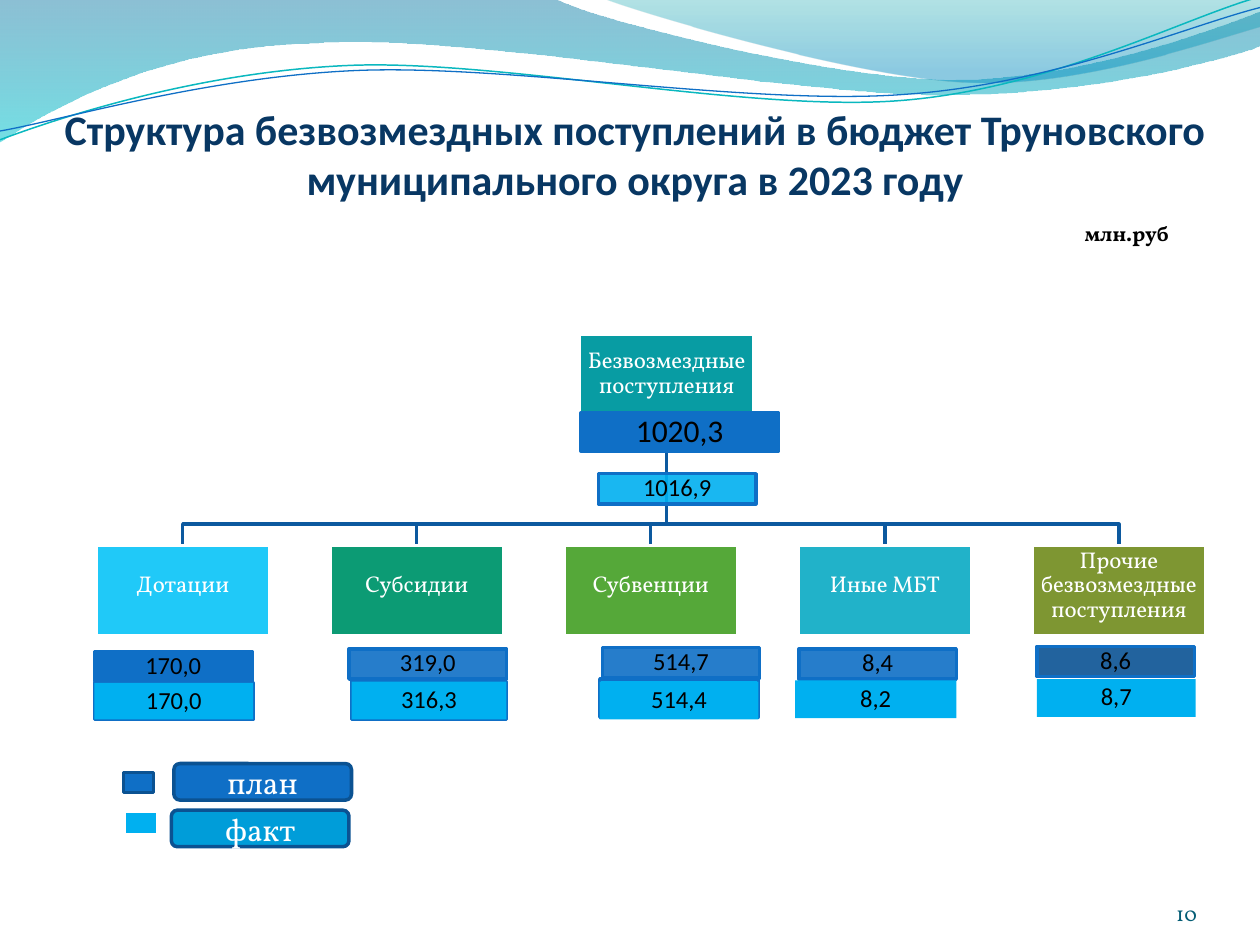
from pptx import Presentation
from pptx.dml.color import RGBColor
from pptx.enum.shapes import MSO_SHAPE as Kind
from pptx.enum.text import MSO_ANCHOR as Anchor, MSO_AUTO_SIZE as Auto, PP_ALIGN as Align
from pptx.oxml.ns import qn
from pptx.util import Inches, Pt
from lxml.etree import SubElement

WHITE = RGBColor(0xFF, 0xFF, 0xFF)
BLACK = RGBColor(0x00, 0x00, 0x00)
NAVY = RGBColor(0x08, 0x37, 0x63)
BLUE = RGBColor(0x0F, 0x6F, 0xC6)
DEEP = RGBColor(0x0B, 0x53, 0x94)
EDGE = RGBColor(0x0B, 0x52, 0x92)
LINK = RGBColor(0x0C, 0x59, 0x9F)
SKY = RGBColor(0x00, 0xB0, 0xF0)
AZURE = RGBColor(0x00, 0x9D, 0xD9)
TEAL = RGBColor(0x08, 0x9C, 0xA3)
AQUA = RGBColor(0x0A, 0xB8, 0xBF)
CYAN = RGBColor(0x20, 0xC9, 0xF8)
GREEN = RGBColor(0x0C, 0x9B, 0x74)
GRASS = RGBColor(0x55, 0xA8, 0x39)
LAKE = RGBColor(0x21, 0xB2, 0xC9)
OLIVE = RGBColor(0x7E, 0x96, 0x32)
PAGE = RGBColor(0x04, 0x5D, 0x75)
# Wave gradients
DUSK = RGBColor(0x00, 0x74, 0xA1)
MINT = RGBColor(0x00, 0xC6, 0xCF)
SEA = RGBColor(0x00, 0xA1, 0xA9)
BAY = RGBColor(0x00, 0x8B, 0xBF)

SERIF, SANS = "Vollkorn", "Calibri"

deck = Presentation()
deck.slide_width, deck.slide_height = Inches(10), Inches(7.5)
slide = deck.slides.add_slide(deck.slide_layouts[5])
shapes = slide.shapes


def write(frame, text, name, size, color, align=Align.CENTER, anchor=Anchor.MIDDLE,
          pad=(0.04, 0.01, 0.04, 0.01), space=None, bold=False):
    left, top, right, base = map(Inches, pad)
    form = {"word_wrap": True, "auto_size": Auto.NONE, "vertical_anchor": anchor,
            "margin_left": left, "margin_top": top,
            "margin_right": right, "margin_bottom": base}
    for key, value in form.items():
        setattr(frame, key, value)
    para = frame.paragraphs[0]
    para.alignment, para.line_spacing = align, space
    run = para.add_run()
    run.text = text
    for key, value in {"name": name, "size": Pt(size), "bold": bold}.items():
        setattr(run.font, key, value)
    run.font.color.rgb = color


def box(place, fill, line=None, kind=Kind.RECTANGLE, alpha=None):
    item = shapes.add_shape(kind, *map(Inches, place))
    item.shadow.inherit = False
    item.fill.solid()
    item.fill.fore_color.rgb = fill
    if alpha:
        tint = item._element.spPr.find(qn("a:solidFill"))[0]
        SubElement(tint, qn("a:alpha"), val=str(alpha * 1000))
    if line is None:
        item.line.fill.background()
    else:
        item.line.color.rgb = line
        item.line.width = Pt(2)
    return item.text_frame


# Outlines: points, gradient stops (place, colour, opacity), line colour and width;
# a point of six numbers is a cubic curve
lines = [
    ([(0, 0), (4.4, -0.01), (4.76, 0.17, 6.64, 0.63, 7.58, 0.63),
      (8.53, 0.63, 9.58, 0.26, 10, 0.09), (10.01, 0.36),
      (9.83, 0.44, 8.7, 0.76, 7.46, 0.75), (6.22, 0.75, 3.82, 0.28, 2.57, 0.34),
      (1.29, 0.36, 0.46, 0.83, -0.01, 1.13), (0, 0)],
     [(0, DUSK, 45), (100, MINT, 55)], None, 0),
    ([(4.79, -0.01), (5.09, 0.11, 6.82, 0.62, 7.69, 0.65),
      (8.56, 0.69, 9.61, 0.32, 10, 0.21), (10, 0), (4.79, -0.01)],
     [(0, SEA, 30), (80, BAY, 45)], None, 0),
    ([(0, 1.11), (0.48, 0.93, 1.58, 0.57, 2.77, 0.52),
      (3.95, 0.47, 5.93, 0.89, 7.13, 0.8), (8.33, 0.71, 9.38, 0.15, 9.98, -0.02)],
     None, AQUA, 0.85),
    ([(0, 1.04), (0.47, 0.96, 1.64, 0.61, 2.83, 0.56),
      (4.03, 0.51, 5.97, 0.84, 7.17, 0.75), (8.36, 0.67, 9.41, 0.21, 10, 0.06)],
     None, BLUE, 0.75),
]

# Branches from the root down to each column, the last one at the back
cols = [0.76 + 7.43 / 4 * i for i in range(5)]
for x in reversed(cols):
    mid = x + 0.69
    lines.append(([(5.29, 3.37), (5.29, 4.16), (mid, 4.16), (mid, 4.33)], None, LINK, 2))

for points, stops, color, width in lines:
    dots = [(Inches(p[i]), Inches(p[i + 1])) for p in points for i in range(0, len(p), 2)]
    pen = shapes.build_freeform(*dots[0])
    pen.add_line_segments(dots[1:], close=bool(stops))
    curve = pen.convert_to_shape()
    curve.shadow.inherit = False
    # Join each three segments of a curve into one cubic
    parts = iter(list(curve._element.iter(qn("a:lnTo"))))
    for point in points[1:]:
        part = next(parts)
        if len(point) == 6:
            part.tag = qn("a:cubicBezTo")
            for _ in range(2):
                rest = next(parts)
                part.append(rest[0])
                rest.getparent().remove(rest)
    if stops:
        curve.line.fill.background()
        curve.fill.gradient()
        curve.fill.gradient_angle = 270
        for stop, (place, tone, alpha) in zip(curve.fill.gradient_stops, stops):
            stop.position = place / 100
            stop.color.rgb = tone
            SubElement(stop._gs[0], qn("a:alpha"), val=str(alpha * 1000))
    else:
        curve.fill.background()
        curve.line.color.rgb = color
        curve.line.width = Pt(width)

# Title
title = shapes.title
title.left, title.top, title.width, title.height = map(Inches, (0.5, 0.77, 9.08, 1.25))
write(title.text_frame,
      "Структура безвозмездных поступлений в бюджет Труновского муниципального округа в 2023 году",
      SANS, 24, NAVY, anchor=Anchor.TOP, pad=(0, 0.05, 0, 0), bold=True)

# Root and column headings
heads = [("Безвозмездные поступления", 4.6, 2.65, TEAL)]
names = ["Дотации", "Субсидии", "Субвенции", "Иные МБТ", "Прочие безвозмездные поступления"]
for name, x, tone in zip(names, cols, (CYAN, GREEN, GRASS, LAKE, OLIVE)):
    heads.append((name, x, 4.33, tone))
for name, x, y, tone in heads:
    frame = box((x, y, 1.38, 0.72), tone, WHITE)
    write(frame, name, SERIF, 13, WHITE, pad=(0.01, 0.01, 0.01, 0.1), space=0.9)

# Framed backs of the plain value boxes
for place, fill in [((0.75, 5.42, 1.26, 0.29), SKY), ((2.79, 5.41, 1.23, 0.3), SKY),
                    ((4.76, 5.39, 1.26, 0.3), SKY), ((4.61, 3.28, 1.57, 0.3), BLUE)]:
    box(place, fill, BLUE)

# Plan and actual values: text, place, fill, line, opacity, text size
cells = [
    ("1016,9", (4.75, 3.76, 1.25, 0.24), SKY, BLUE, 90, 14),
    ("170,0", (0.75, 5.17, 1.25, 0.24), BLUE, BLUE, None, 14),
    ("319,0", (2.77, 5.15, 1.25, 0.24), BLUE, BLUE, 90, 14),
    ("514,7", (4.78, 5.14, 1.25, 0.24), BLUE, BLUE, 90, 14),
    ("8,4", (6.34, 5.15, 1.25, 0.24), BLUE, BLUE, 90, 14),
    ("8,6", (8.23, 5.13, 1.25, 0.24), DEEP, BLUE, 90, 14),
    ("170,0", (0.75, 5.42, 1.26, 0.29), SKY, None, None, 14),
    ("316,3", (2.79, 5.41, 1.23, 0.3), SKY, None, None, 14),
    ("514,4", (4.76, 5.41, 1.26, 0.3), SKY, None, None, 14),
    ("8,2", (6.31, 5.4, 1.28, 0.3), SKY, None, None, 14),
    ("1020,3", (4.61, 3.28, 1.57, 0.3), BLUE, None, None, 18),
    ("8,7", (8.23, 5.39, 1.26, 0.3), SKY, None, None, 14),
]
for text, place, fill, line, alpha, size in cells:
    frame = box(place, fill, line, alpha=alpha)
    write(frame, text, SANS, size, BLACK, space=0.9)

# Legend
keys = [("план", (0.98, 6.13), BLUE, EDGE, (1.38, 6.06), BLUE),
        ("факт", (1, 6.45), SKY, None, (1.36, 6.43), AZURE)]
for text, spot, fill, line, place, tone in keys:
    box((*spot, 0.24, 0.16), fill, line, Kind.FLOWCHART_PROCESS)
    frame = box((*place, 1.41, 0.29), tone, EDGE, Kind.FLOWCHART_ALTERNATE_PROCESS)
    write(frame, text, SERIF, 18, WHITE, pad=(0.1, 0.05, 0.1, 0.05))

# Unit and page number
unit = shapes.add_textbox(*map(Inches, (8.51, 1.7, 0.9, 0.3)))
write(unit.text_frame, "млн.руб", SERIF, 12, BLACK, Align.LEFT, Anchor.TOP,
      (0.1, 0.05, 0.1, 0.05), bold=True)
page = shapes.add_textbox(*map(Inches, (8.67, 6.95, 0.83, 0.4)))
write(page.text_frame, "10", SERIF, 12, PAGE, Align.RIGHT, Anchor.BOTTOM, (0, 0, 0, 0))

deck.save("out.pptx")
